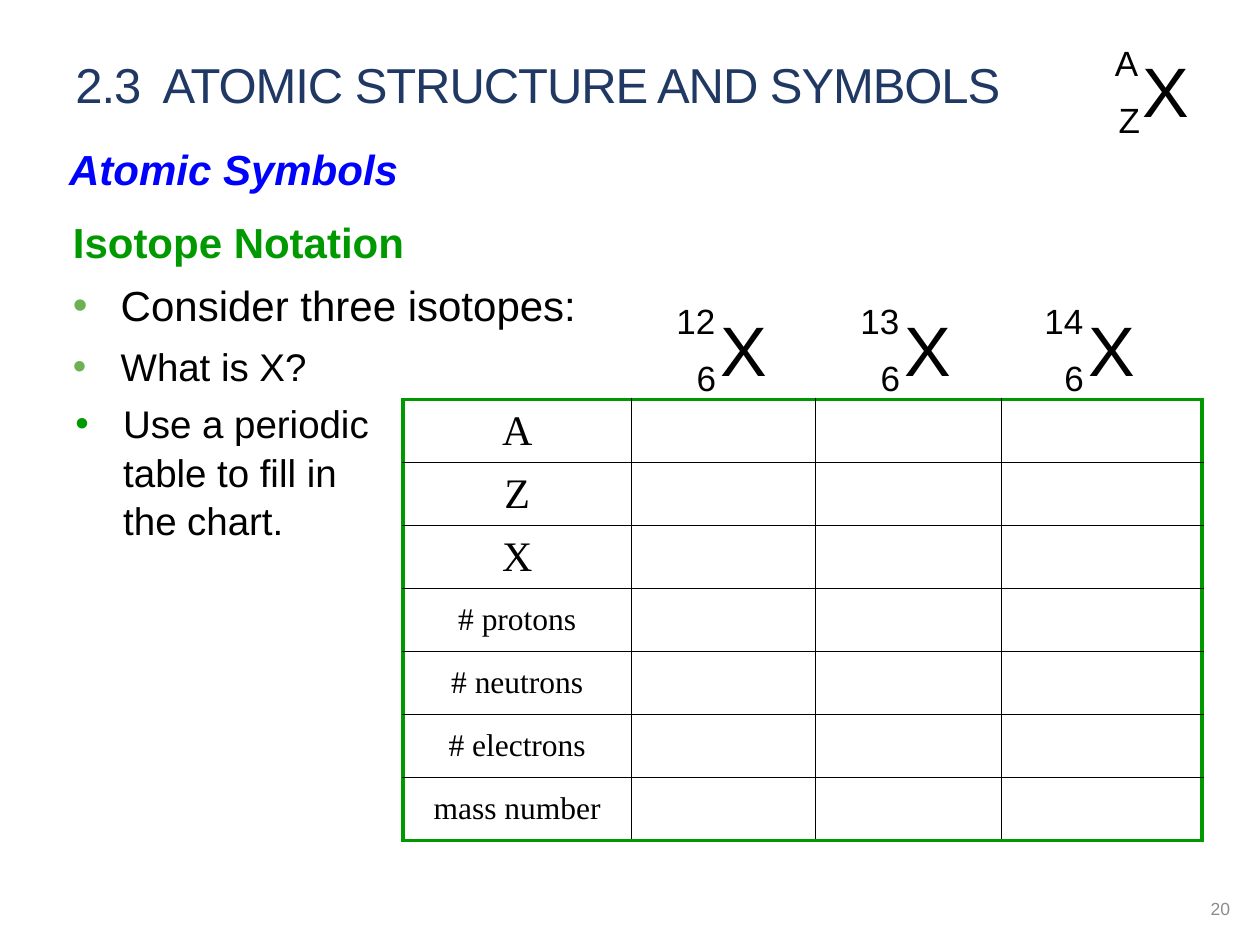
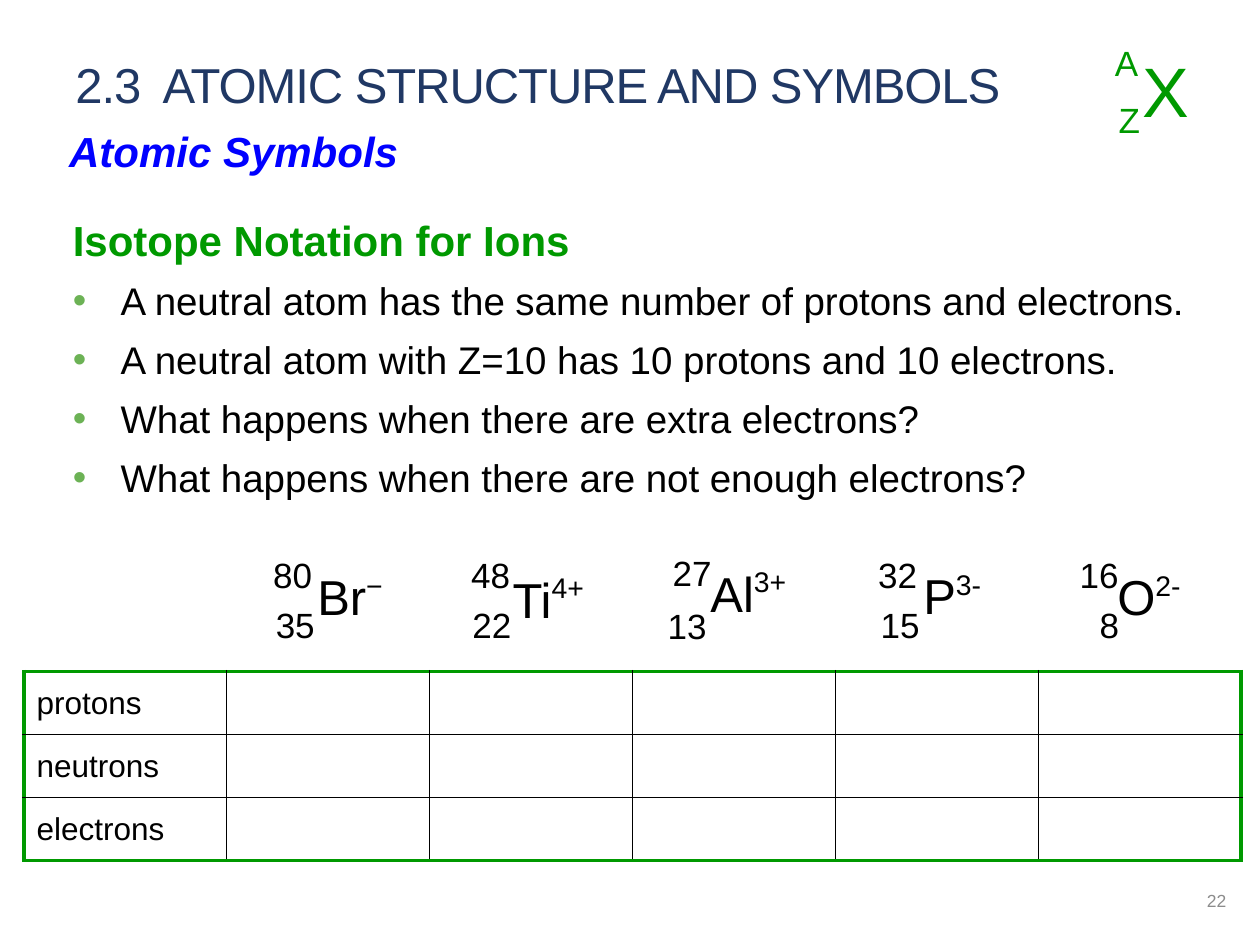
"""Build two slides on isotope notation for atoms and ions."""
from dataclasses import dataclass

from lxml import etree
from pptx import Presentation
from pptx import util as u
from pptx.dml.color import RGBColor
from pptx.enum import text
from pptx.oxml import ns


@dataclass(frozen=True)
class Theme:
    font: str = "Arial"
    serif: str = "Times New Roman"
    title: str = "203864"
    blue: str = "0000FF"
    green: str = "009900"
    bullet: str = "6CB255"
    ink: str = "000000"
    grey: str = "8C8C8C"
    title_size: float = 28
    head_size: float = 24
    body_size: float = 22
    index_size: float = 20
    symbol_size: float = 40
    ion_size: float = 28
    cell_size: float = 18
    number_size: float = 10
    thin: float = 0.75
    thick: float = 2.25
    gap: float = 6
    leading: float = 1.05
    indent: float = 0.38


T = Theme()
INDEX_H = 0.44


def put(obj, **values):
    for name, value in values.items():
        setattr(obj, name, value)


def add_run(p, words, size, color=T.ink, spc=None, baseline=None, **fmt):
    r = p.add_run()
    r.text = words
    put(r.font, **{"name": T.font, "size": u.Pt(size), **fmt})
    r.font.color.rgb = RGBColor.from_string(color)
    for key, value in {"spc": spc, "baseline": baseline}.items():
        if value is not None:
            r.font._element.set(key, str(value))


def add_box(shapes, at, **frame):
    sp = shapes.add_textbox(*map(u.Inches, at))
    put(sp.text_frame, **{"word_wrap": True, **frame})
    return sp.text_frame


def add_bullet(p, color):
    pPr = p._p.get_or_add_pPr()
    pPr.set("marL", str(u.Inches(T.indent)))
    pPr.set("indent", str(-u.Inches(T.indent)))
    clr = etree.SubElement(pPr, ns.qn("a:buClr"))
    etree.SubElement(clr, ns.qn("a:srgbClr")).set("val", color)
    etree.SubElement(pPr, ns.qn("a:buFont")).set("typeface", T.font)
    etree.SubElement(pPr, ns.qn("a:buChar")).set("char", "•")


def add_body(s, at, lines, bullet=T.bullet):
    """Lines are (words, size, format); those without a format get a bullet."""
    tf = add_box(s.shapes, at)
    for i, (words, size, fmt) in enumerate(lines):
        p = tf.add_paragraph() if i else tf.paragraphs[0]
        if not fmt:
            add_bullet(p, bullet)
        put(p, space_after=u.Pt(T.gap), line_spacing=T.leading)
        add_run(p, words, size, **fmt)


def add_heading(words):
    return words, T.head_size, {"color": T.green, "bold": True}


def add_symbol(s, parts, color=T.ink):
    """Parts are (words, raised words, size, place)."""
    grp = s.shapes.add_group_shape()
    for words, raised, size, at in parts:
        tf = add_box(grp.shapes, at, word_wrap=False,
                     auto_size=text.MSO_AUTO_SIZE.SHAPE_TO_FIT_TEXT)
        p = tf.paragraphs[0]
        add_run(p, words, size, color)
        if raised:
            add_run(p, raised, size, color, baseline=40000)


def add_isotope(s, left, top, mass, atomic, widths, shifts, color=T.ink):
    """Shifts move the X and the lower index right of the upper index."""
    add_symbol(s, [
        (mass, "", T.index_size, (left, top, widths[0], INDEX_H)),
        ("X", "", T.symbol_size, (left + shifts[0], top + 0.05, 0.58, 0.77)),
        (atomic, "", T.index_size,
         (left + shifts[1], top + 0.45, widths[1], INDEX_H)),
    ], color)


def add_ion(s, element, charge, at, mass, mass_at, atomic, atomic_at):
    indices = [(n, "", T.index_size, (*xy, 0.51 if len(n) > 1 else 0.36, INDEX_H))
               for n, xy in ((mass, mass_at), (atomic, atomic_at))]
    add_symbol(s, [(element, charge, T.ion_size, (*at, 0.57)), *indices])


def set_border(cell, sides):
    tcPr = cell._tc.get_or_add_tcPr()
    for i, (side, outer) in enumerate(sides.items()):
        ln = etree.Element(ns.qn(f"a:ln{side}"))
        ln.set("w", str(u.Pt(T.thick if outer else T.thin)))
        fill = etree.SubElement(ln, ns.qn("a:solidFill"))
        clr = etree.SubElement(fill, ns.qn("a:srgbClr"))
        clr.set("val", T.green if outer else T.ink)
        tcPr.insert(i, ln)


def add_grid(s, left, top, widths, labels, align, font, row_height=0.5):
    """Labels are (words, size) for the first column; other cells stay empty."""
    rows, cols = len(labels), len(widths)
    size = sum(widths), rows * row_height
    tbl = s.shapes.add_table(rows, cols, *map(u.Inches, (left, top, *size))).table
    put(tbl, first_row=False, horz_banding=False)
    for col, width in zip(tbl.columns, widths):
        col.width = u.Inches(width)
    for i, (words, pt) in enumerate(labels):
        tbl.rows[i].height = u.Inches(row_height)
        for j in range(cols):
            cell = tbl.cell(i, j)
            cell.fill.background()
            set_border(cell, {"L": j == 0, "R": j == cols - 1,
                              "T": i == 0, "B": i == rows - 1})
        cell = tbl.cell(i, 0)
        cell.vertical_anchor = text.MSO_ANCHOR.MIDDLE
        p = cell.text_frame.paragraphs[0]
        p.alignment = align
        add_run(p, words, pt, name=font)


def add_base(prs, number, number_at, subtitle_top, key_color):
    s = prs.slides.add_slide(prs.slide_layouts[6])
    tf = add_box(s.shapes, (0.5, 0.38, 9.33, 0.57),
                 vertical_anchor=text.MSO_ANCHOR.BOTTOM)
    add_run(tf.paragraphs[0], "2.3  ATOMIC STRUCTURE AND SYMBOLS",
            T.title_size, T.title, spc=-60)
    add_body(s, (0.45, subtitle_top, 9.11, 0.62),
             [("Atomic Symbols", T.head_size,
               {"color": T.blue, "bold": True, "italic": True})])
    tf = add_box(s.shapes, (*number_at, 2.25, 0.4),
                 vertical_anchor=text.MSO_ANCHOR.MIDDLE)
    p = tf.paragraphs[0]
    p.alignment = text.PP_ALIGN.RIGHT
    add_run(p, number, T.number_size, T.grey)
    add_isotope(s, 8.75, 0.28, "A", "Z", (0.39, 0.37), (0.22, 0.03), key_color)
    return s


def add_isotopes_slide(prs):
    s = add_base(prs, "20", (7.61, 7.01), 1.07, T.ink)
    add_body(s, (0.48, 1.65, 7.85, 3.31), [
        add_heading("Isotope Notation"),
        ("Consider three isotopes:", T.head_size, {}),
        ("What is X?", T.body_size, {})])
    add_body(s, (0.5, 3.11, 2.7, 3.02),
             [("Use a periodic table to fill in the chart.", T.body_size, {})],
             T.green)
    for i, mass in enumerate(("12", "13", "14")):
        add_isotope(s, 5.27 + 1.46 * i, 2.33, mass, "6", (0.51, 0.36), (0.35, 0.16))
    labels = [(w, T.head_size) for w in "AZX"]
    labels += [(w, T.cell_size) for w in
               ("# protons", "# neutrons", "# electrons", "mass number")]
    add_grid(s, 3.2, 3.17, (1.81, 1.46, 1.48, 1.59), labels,
             text.PP_ALIGN.CENTER, T.serif)


def add_ions_slide(prs):
    s = add_base(prs, "22", (7.58, 6.95), 0.93, T.green)
    questions = ("A neutral atom has the same number of protons and electrons.",
                 "A neutral atom with Z=10 has 10 protons and 10 electrons.",
                 "What happens when there are extra electrons?",
                 "What happens when there are not enough electrons?")
    add_body(s, (0.48, 1.63, 9.34, 2.86),
             [add_heading("Isotope Notation for Ions"),
              *((q, T.body_size, {}) for q in questions)])
    ions = (
        ("Br", "−", (2.42, 4.45, 0.75), "80", (2.07, 4.34), "35", (2.09, 4.74)),
        ("Ti", "4+", (3.97, 4.47, 0.81), "48", (3.64, 4.34), "22", (3.65, 4.74)),
        ("Al", "3+", (5.54, 4.42, 0.85), "27", (5.24, 4.33), "13", (5.2, 4.75)),
        ("P", "3-", (7.23, 4.44, 0.7), "32", (6.87, 4.34), "15", (6.89, 4.74)),
        ("O", "2-", (8.77, 4.45, 0.74), "16", (8.47, 4.34), "8", (8.63, 4.74)),
    )
    for ion in ions:
        add_ion(s, *ion)
    labels = [(w, T.cell_size) for w in ("protons", "neutrons", "electrons")]
    add_grid(s, 0.19, 5.33, [1.61] * 6, labels, text.PP_ALIGN.LEFT, T.font)


def main():
    prs = Presentation()
    put(prs, slide_width=u.Inches(10), slide_height=u.Inches(7.5))
    add_isotopes_slide(prs)
    add_ions_slide(prs)
    prs.save("out.pptx")


if __name__ == "__main__":
    main()
